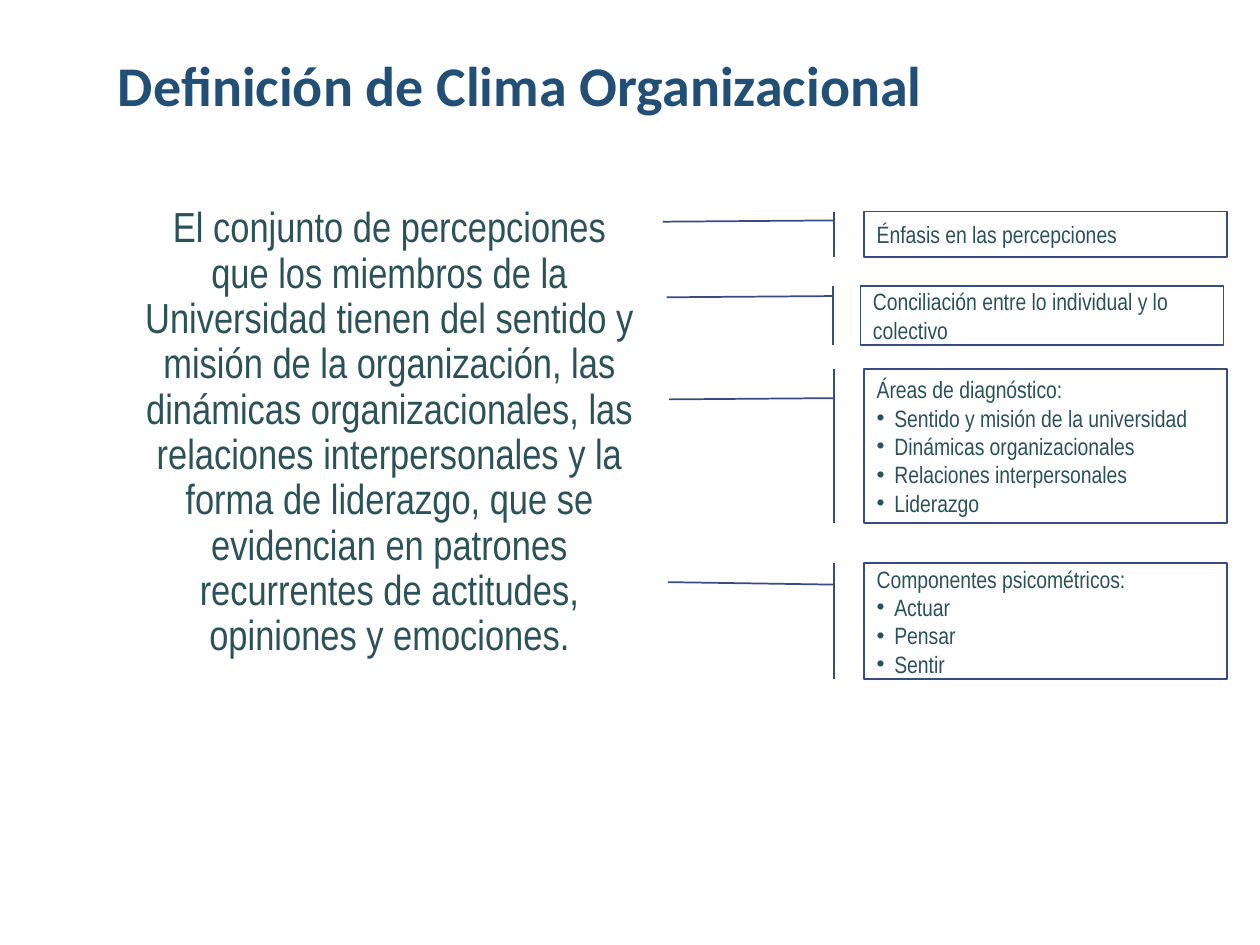
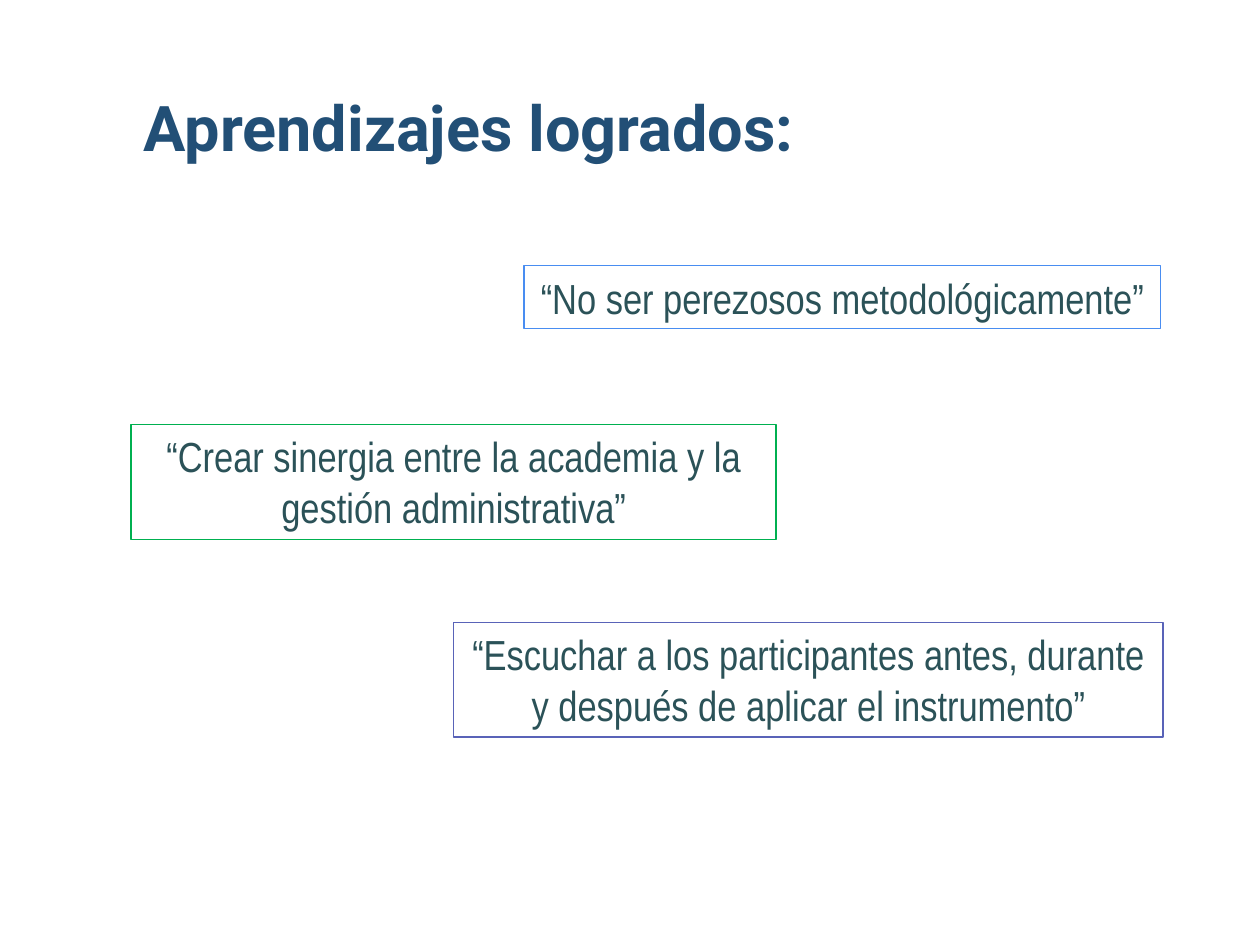
from dataclasses import dataclass

from lxml import etree
from pptx import Presentation
from pptx.dml.color import RGBColor
from pptx.enum.shapes import MSO_SHAPE
from pptx.enum.text import MSO_ANCHOR, PP_ALIGN
from pptx.oxml.ns import qn
from pptx.util import Inches, Pt

RECTANGLE = MSO_SHAPE.RECTANGLE
ACCENT_CALLOUT = MSO_SHAPE.LINE_CALLOUT_1_BORDER_AND_ACCENT_BAR
LEFT, CENTER = PP_ALIGN.LEFT, PP_ALIGN.CENTER
TOP, MIDDLE, BOTTOM = MSO_ANCHOR.TOP, MSO_ANCHOR.MIDDLE, MSO_ANCHOR.BOTTOM

# Shared colours and measures
TITLE_BLUE = "224F76"
TEXT_TEAL = "2B5258"
CALLOUT_BLUE = "374C81"
WHITE = "FFFFFF"
CALLOUT_WIDTH = 2.88
BULLET_INDENT = 0.14


@dataclass(frozen=True)
class Box:
    left: float
    top: float
    width: float
    height: float


@dataclass(frozen=True)
class TextStyle:
    font: str
    size: float
    color: str = TEXT_TEAL
    bold: bool = False
    align: PP_ALIGN = CENTER
    line_spacing: float = 1.0


@dataclass(frozen=True)
class Callout:
    left: float
    top: float
    height: float
    bar_x: float
    leader_y: float
    tip: tuple[float, float]
    heading: str
    bullets: tuple[str, ...] = ()


@dataclass(frozen=True)
class Quote:
    box: Box
    border: str
    text: str


DEFINITION_STYLE = TextStyle("Arial Narrow", 24, line_spacing=0.9)
QUOTE_STYLE = TextStyle("Arial Narrow", 24)
CALLOUT_STYLE = TextStyle("Arial Narrow", 13.5, align=LEFT)

DEFINITION = (
    "El conjunto de percepciones que los miembros de la Universidad tienen del "
    "sentido y misión de la organización, las dinámicas organizacionales, las "
    "relaciones interpersonales y la forma de liderazgo, que se evidencian en "
    "patrones recurrentes de actitudes, opiniones y emociones."
)

CALLOUTS = (
    Callout(6.86, 1.68, 0.36, 6.62, 1.75, (5.26, 1.76), "Énfasis en las percepciones"),
    Callout(6.83, 2.27, 0.47, 6.61, 2.35, (5.29, 2.36),
            "Conciliación entre lo individual y lo colectivo"),
    Callout(6.86, 2.93, 1.22, 6.62, 3.16, (5.31, 3.17), "Áreas de diagnóstico:",
            ("Sentido y misión de la universidad", "Dinámicas organizacionales",
             "Relaciones interpersonales", "Liderazgo")),
    Callout(6.86, 4.47, 0.92, 6.62, 4.64, (5.3, 4.62), "Componentes psicométricos:",
            ("Actuar", "Pensar", "Sentir")),
)

QUOTES = (
    Quote(Box(4.16, 2.11, 5.05, 0.5), "498DF1", "“No ser perezosos metodológicamente”"),
    Quote(Box(1.04, 3.37, 5.12, 0.91), "00B050",
          "“Crear sinergia entre la academia y la gestión administrativa”"),
    Quote(Box(3.6, 4.94, 5.63, 0.91), "5963B8",
          "“Escuchar a los participantes antes, durante y después de aplicar el instrumento”"),
)


def rgb(color: str) -> RGBColor:
    return RGBColor.from_string(color)


def inches(box: Box) -> tuple:
    return Inches(box.left), Inches(box.top), Inches(box.width), Inches(box.height)


def add_bullet(paragraph) -> None:
    properties = paragraph._p.get_or_add_pPr()
    properties.set("marL", str(Inches(BULLET_INDENT)))
    properties.set("indent", str(-Inches(BULLET_INDENT)))
    color = etree.SubElement(properties, qn("a:buClr"))
    etree.SubElement(color, qn("a:srgbClr"), val=TEXT_TEAL)
    etree.SubElement(properties, qn("a:buSzPct"), val="96000")
    etree.SubElement(properties, qn("a:buFont"), typeface="Arial")
    etree.SubElement(properties, qn("a:buChar"), char="•")


def write_line(paragraph, text: str, style: TextStyle) -> None:
    paragraph.alignment = style.align
    paragraph.line_spacing = style.line_spacing
    run = paragraph.add_run()
    run.text = text
    run.font.name = style.font
    run.font.size = Pt(style.size)
    run.font.bold = style.bold
    run.font.color.rgb = rgb(style.color)


def write(shape, text: str, style: TextStyle, anchor: MSO_ANCHOR = TOP,
          bullets: tuple[str, ...] = ()) -> None:
    frame = shape.text_frame
    frame.word_wrap = True
    frame.vertical_anchor = anchor
    frame.margin_left = frame.margin_right = Inches(0.1)
    frame.margin_top = frame.margin_bottom = Inches(0.05)
    write_line(frame.paragraphs[0], text, style)
    for bullet in bullets:
        paragraph = frame.add_paragraph()
        add_bullet(paragraph)
        write_line(paragraph, bullet, style)


def add_text(slide, box: Box, text: str, style: TextStyle, anchor: MSO_ANCHOR = TOP) -> None:
    write(slide.shapes.add_textbox(*inches(box)), text, style, anchor)


def add_title(slide, box: Box, text: str, font: str, size: float,
              anchor: MSO_ANCHOR = TOP, line_spacing: float = 1.0) -> None:
    style = TextStyle(font, size, TITLE_BLUE, True, line_spacing=line_spacing)
    add_text(slide, box, text, style, anchor)


def add_outlined(slide, preset: MSO_SHAPE, box: Box, border: str, width: float):
    shape = slide.shapes.add_shape(preset, *inches(box))
    shape.shadow.inherit = False
    shape.line.color.rgb = rgb(border)
    shape.line.width = Pt(width)
    return shape


def add_callout(slide, callout: Callout) -> None:
    box = Box(callout.left, callout.top, CALLOUT_WIDTH, callout.height)
    shape = add_outlined(slide, ACCENT_CALLOUT, box, CALLOUT_BLUE, 1)
    shape.fill.solid()
    shape.fill.fore_color.rgb = rgb(WHITE)
    # The leader runs from the accent bar to its tip, as fractions of the box
    leader = ((callout.bar_x, callout.leader_y), callout.tip)
    for end, (x, y) in enumerate(leader):
        shape.adjustments[2 * end] = (y - box.top) / box.height
        shape.adjustments[2 * end + 1] = (x - box.left) / box.width
    write(shape, callout.heading, CALLOUT_STYLE, MIDDLE, callout.bullets)


def add_quote(slide, quote: Quote) -> None:
    shape = add_outlined(slide, RECTANGLE, quote.box, quote.border, 0.75)
    shape.fill.background()
    write(shape, quote.text, QUOTE_STYLE)


def build_definition(slide) -> None:
    add_title(slide, Box(0.79, 0.35, 6.68, 0.64),
              "Definición de Clima Organizacional", "Calibri", 32)
    add_text(slide, Box(1.04, 1.59, 4.1, 3.9), DEFINITION, DEFINITION_STYLE)
    for callout in CALLOUTS:
        add_callout(slide, callout)


def build_lessons(slide) -> None:
    add_title(slide, Box(0.88, 0.67, 5.81, 0.69), "Aprendizajes logrados: ",
              "Roboto", 36, BOTTOM, 0.9)
    for quote in QUOTES:
        add_quote(slide, quote)


def main() -> None:
    deck = Presentation()
    deck.slide_width, deck.slide_height = Inches(10), Inches(7.5)
    blank = deck.slide_layouts[6]
    for build in (build_definition, build_lessons):
        build(deck.slides.add_slide(blank))
    deck.save("out.pptx")


if __name__ == "__main__":
    main()
